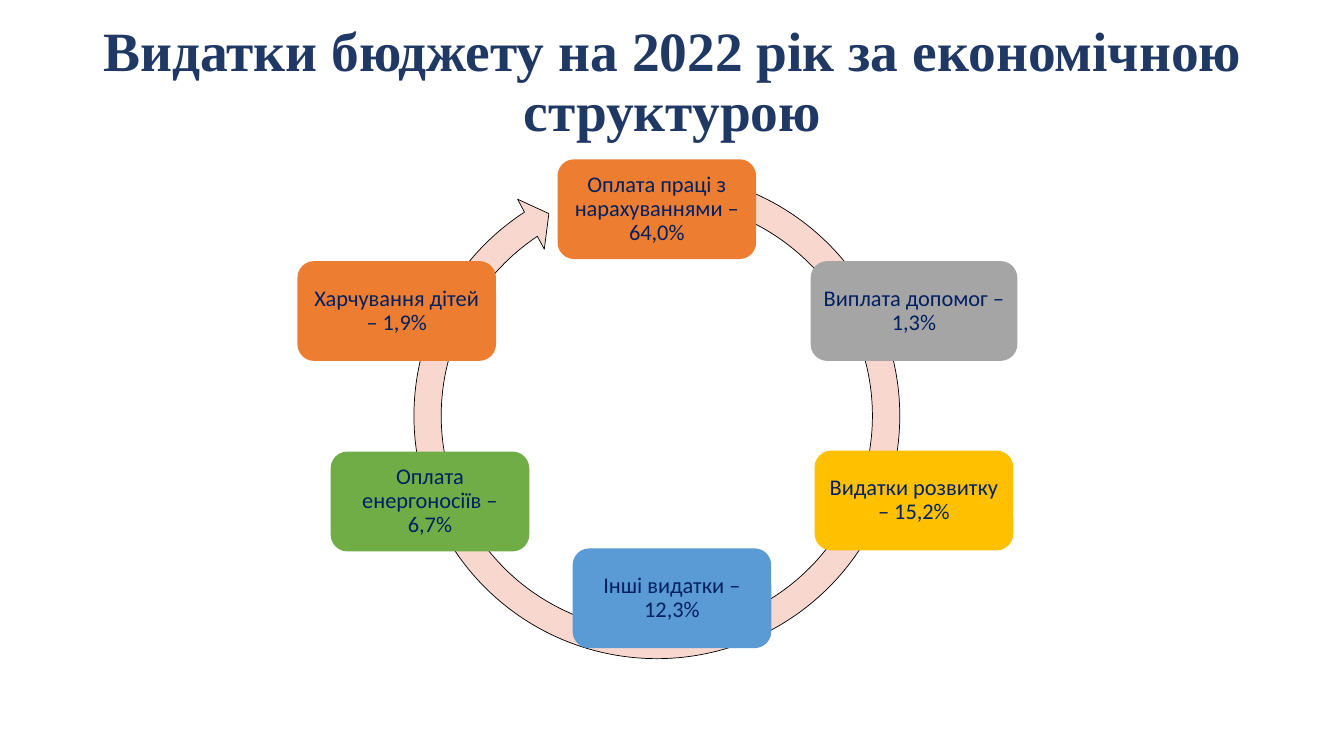
from pptx import Presentation
from pptx.dml.color import RGBColor
from pptx.enum.shapes import MSO_SHAPE
from pptx.enum.text import MSO_ANCHOR, PP_ALIGN
from pptx.util import Inches, Pt

ROUNDED = MSO_SHAPE.ROUNDED_RECTANGLE
CIRCULAR_ARROW = MSO_SHAPE.CIRCULAR_ARROW
MIDDLE = MSO_ANCHOR.MIDDLE
CENTER = PP_ALIGN.CENTER


def color(value):
    return RGBColor.from_string(value)


def write(box, text, font, size, shade, bold=False):
    frame = box.text_frame
    frame.text = text
    frame.word_wrap = True
    frame.vertical_anchor = MIDDLE
    para = frame.paragraphs[0]
    para.alignment = CENTER
    para.line_spacing = 0.9
    span = para.runs[0]
    span.font.name = font
    span.font.size = Pt(size)
    span.font.bold = bold
    span.font.color.rgb = color(shade)
    return frame


deck = Presentation()
deck.slide_width = Inches(13.33)
deck.slide_height = Inches(7.5)
page = deck.slides.add_slide(deck.slide_layouts[6])

title = page.shapes.add_textbox(Inches(0.92), Inches(0.4), Inches(11.5), Inches(1.45))
title_frame = write(title, "Видатки бюджету на 2022 рік за економічною структурою",
                    "Times New Roman", 39.6, "203864", True)
title_frame.margin_bottom = Inches(0.64)

ring = page.shapes.add_shape(CIRCULAR_ARROW, Inches(3.96), Inches(1.57), Inches(5.11), Inches(5.11))
for index, value in enumerate([0.053, 3.126, 142.017, 171.425, 0.055]):
    ring.adjustments[index] = value
ring.shadow.inherit = False
ring.fill.solid()
ring.fill.fore_color.rgb = color("F8D7CE")
ring.line.color.rgb = color("000000")
ring.line.width = Pt(0.5)

expenses = [
    ("Оплата праці з нарахуваннями – 64,0%", 5.53, 1.58, 1.97, "ED7D31"),
    ("Виплата допомог – 1,3%", 8.04, 2.59, 2.05, "A5A5A5"),
    ("Видатки розвитку – 15,2%", 8.08, 4.47, 1.97, "FFC000"),
    ("Інші видатки – 12,3%", 5.68, 5.44, 1.97, "5B9BD5"),
    ("Оплата енергоносіїв – 6,7%", 3.28, 4.48, 1.97, "70AD47"),
    ("Харчування дітей – 1,9%", 2.95, 2.59, 1.97, "ED7D31"),
]
for text, left, top, width, fill in expenses:
    box = page.shapes.add_shape(ROUNDED, Inches(left), Inches(top), Inches(width), Inches(0.99))
    box.shadow.inherit = False
    box.fill.solid()
    box.fill.fore_color.rgb = color(fill)
    box.line.fill.background()
    frame = write(box, text, "Calibri", 16, "002060")
    frame.margin_left = frame.margin_right = Inches(0.07)
    frame.margin_top = frame.margin_bottom = Inches(0.07)

deck.save("out.pptx")
